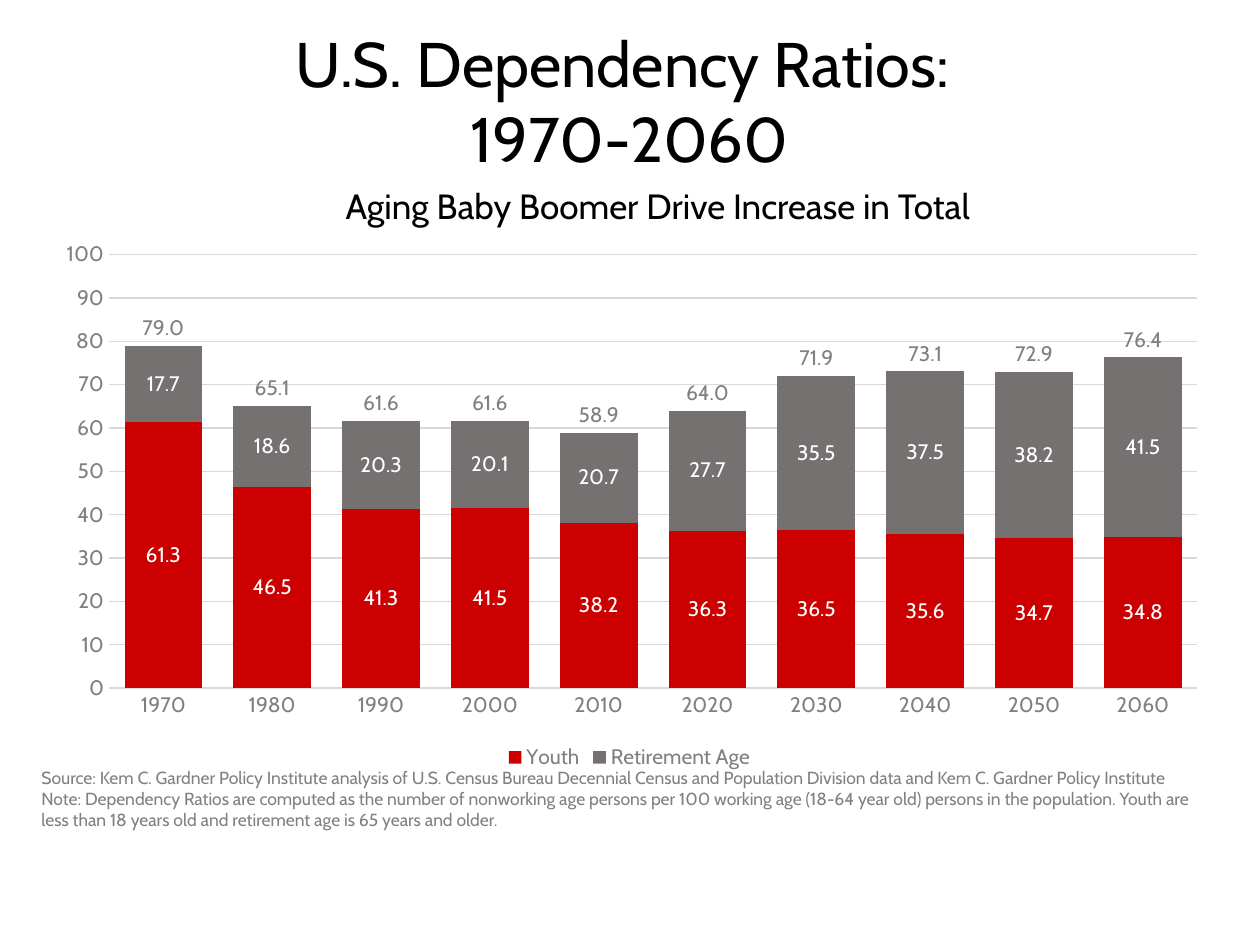
from lxml import etree
from pptx import Presentation
from pptx import util as u
from pptx.chart import data as chart_data
from pptx.dml import color
from pptx.enum import chart as chart_enum, text
from pptx.oxml import ns

FONT = "Cabin"
COLORS = {
    "black": "000000",
    "white": "FFFFFF",
    "label": "808080",
    "grid": "D9D9D9",
    "youth": "CC0000",
    "retirement": "767171",
}
YEARS = [str(year) for year in range(1970, 2061, 10)]
YOUTH = [61.3, 46.5, 41.3, 41.5, 38.2, 36.3, 36.5, 35.6, 34.7, 34.8]
RETIREMENT = [17.7, 18.6, 20.3, 20.1, 20.7, 27.7, 35.5, 37.5, 38.2, 41.5]
TOTAL = [79, 65.1, 61.6, 61.6, 58.9, 64, 71.9, 73.1, 72.9, 76.4]
CENTER = chart_enum.XL_LABEL_POSITION.CENTER
INSIDE_BASE = chart_enum.XL_LABEL_POSITION.INSIDE_BASE
SERIES = [
    ("Youth", YOUTH, "youth", "white", CENTER),
    ("Retirement Age", RETIREMENT, "retirement", "white", CENTER),
    ("Series 3", TOTAL, None, "label", INSIDE_BASE),
]


def px(length):
    return u.Emu(round(length * 914400 / 126))


def rgb(name):
    return color.RGBColor.from_string(COLORS[name])


def style_font(font, size, color_name):
    font.name = FONT
    font.size = u.Pt(size)
    font.color.rgb = rgb(color_name)


def style_line(line, color_name):
    line.color.rgb = rgb(color_name)
    line.width = u.Pt(0.75)


def add_text(slide, box, lines, size, color_name, align, anchor):
    shape = slide.shapes.add_textbox(*map(px, box))
    frame = shape.text_frame
    frame.word_wrap = True
    frame.vertical_anchor = anchor
    frame.text = "\n".join(lines)
    for paragraph in frame.paragraphs:
        paragraph.alignment = align
        for run in paragraph.runs:
            style_font(run.font, size, color_name)


def add_heading(slide, box):
    left, top, width, height = box
    center = text.PP_ALIGN.CENTER
    add_text(slide, (left, top, width, 165),
             ["U.S. Dependency Ratios: ", "1970-2060"],
             36, "black", center, text.MSO_ANCHOR.TOP)
    add_text(slide, (left + 77, top + height - 50, width - 97, 50),
             ["Aging Baby Boomer Drive Increase in Total"],
             20, "black", center, text.MSO_ANCHOR.MIDDLE)


def set_plot_layout(chart, fractions):
    plot_area = chart._chartSpace.find(".//" + ns.qn("c:plotArea"))
    for old_layout in plot_area.findall(ns.qn("c:layout")):
        plot_area.remove(old_layout)
    layout = etree.Element(ns.qn("c:layout"))
    manual = etree.SubElement(layout, ns.qn("c:manualLayout"))
    settings = [("layoutTarget", "inner"), ("xMode", "edge"), ("yMode", "edge")]
    settings += zip("xywh", fractions)
    for tag, value in settings:
        etree.SubElement(manual, ns.qn(f"c:{tag}")).set("val", str(value))
    plot_area.insert(0, layout)


def hide_legend_entry(legend, index):
    entry = etree.Element(ns.qn("c:legendEntry"))
    for tag, value in (("idx", index), ("delete", 1)):
        etree.SubElement(entry, ns.qn(f"c:{tag}")).set("val", str(value))
    legend._element.insert(1, entry)


def style_axes(chart):
    for axis in (chart.category_axis, chart.value_axis):
        axis.major_tick_mark = chart_enum.XL_TICK_MARK.NONE
        axis.minor_tick_mark = chart_enum.XL_TICK_MARK.NONE
        style_font(axis.tick_labels.font, 12, "label")
    style_line(chart.category_axis.format.line, "grid")
    value_axis = chart.value_axis
    value_axis.minimum_scale = 0
    value_axis.maximum_scale = 100
    value_axis.major_unit = 10
    value_axis.format.line.fill.background()
    value_axis.tick_labels.number_format = "0"
    value_axis.tick_labels.number_format_is_linked = False
    style_line(value_axis.major_gridlines.format.line, "grid")


def style_series(series, fill_name, label_color, position):
    series.invert_if_negative = False
    if fill_name:
        series.format.fill.solid()
        series.format.fill.fore_color.rgb = rgb(fill_name)
    else:
        series.format.fill.background()
    series.format.line.fill.background()
    labels = series.data_labels
    labels.show_value = True
    labels.number_format = "#,##0.0"
    labels.number_format_is_linked = False
    labels.position = position
    style_font(labels.font, 12, label_color)


def add_ratio_chart(slide, box):
    ratios = chart_data.CategoryChartData(number_format="0.0")
    ratios.categories = YEARS
    for name, values, *_ in SERIES:
        ratios.add_series(name, values)
    chart = slide.shapes.add_chart(
        chart_enum.XL_CHART_TYPE.COLUMN_STACKED, *map(px, box), ratios).chart
    style_font(chart.font, 12, "label")
    chart.has_title = False
    plot = chart.plots[0]
    plot.gap_width = 40
    plot.overlap = 100
    plot.vary_by_categories = False
    for series, (_, _, *style) in zip(plot.series, SERIES):
        style_series(series, *style)
    style_axes(chart)
    chart.has_legend = True
    legend = chart.legend
    legend.position = chart_enum.XL_LEGEND_POSITION.BOTTOM
    legend.include_in_layout = False
    style_font(legend.font, 12, "label")
    hide_legend_entry(legend, 2)
    set_plot_layout(chart, (0.06, 0.04, 0.92, 0.8))


def add_notes(slide, box):
    lines = [
        "Source: Kem C. Gardner Policy Institute analysis of U.S. Census Bureau "
        "Decennial Census and Population Division data and Kem C. Gardner Policy Institute",
        "Note: Dependency Ratios are computed as the number of nonworking age persons "
        "per 100 working age (18-64 year old) persons in the population. Youth are less "
        "than 18 years old and retirement age is 65 years and older.",
    ]
    add_text(slide, box, lines, 10, "label",
             text.PP_ALIGN.LEFT, text.MSO_ANCHOR.TOP)


def main():
    presentation = Presentation()
    presentation.slide_width = px(1260)
    presentation.slide_height = px(945)
    slide = presentation.slides.add_slide(presentation.slide_layouts[6])
    add_heading(slide, (38, 18, 1183, 212))
    add_ratio_chart(slide, (38, 233, 1183, 542))
    add_notes(slide, (29, 761, 1192, 97))
    presentation.save("out.pptx")


if __name__ == "__main__":
    main()
